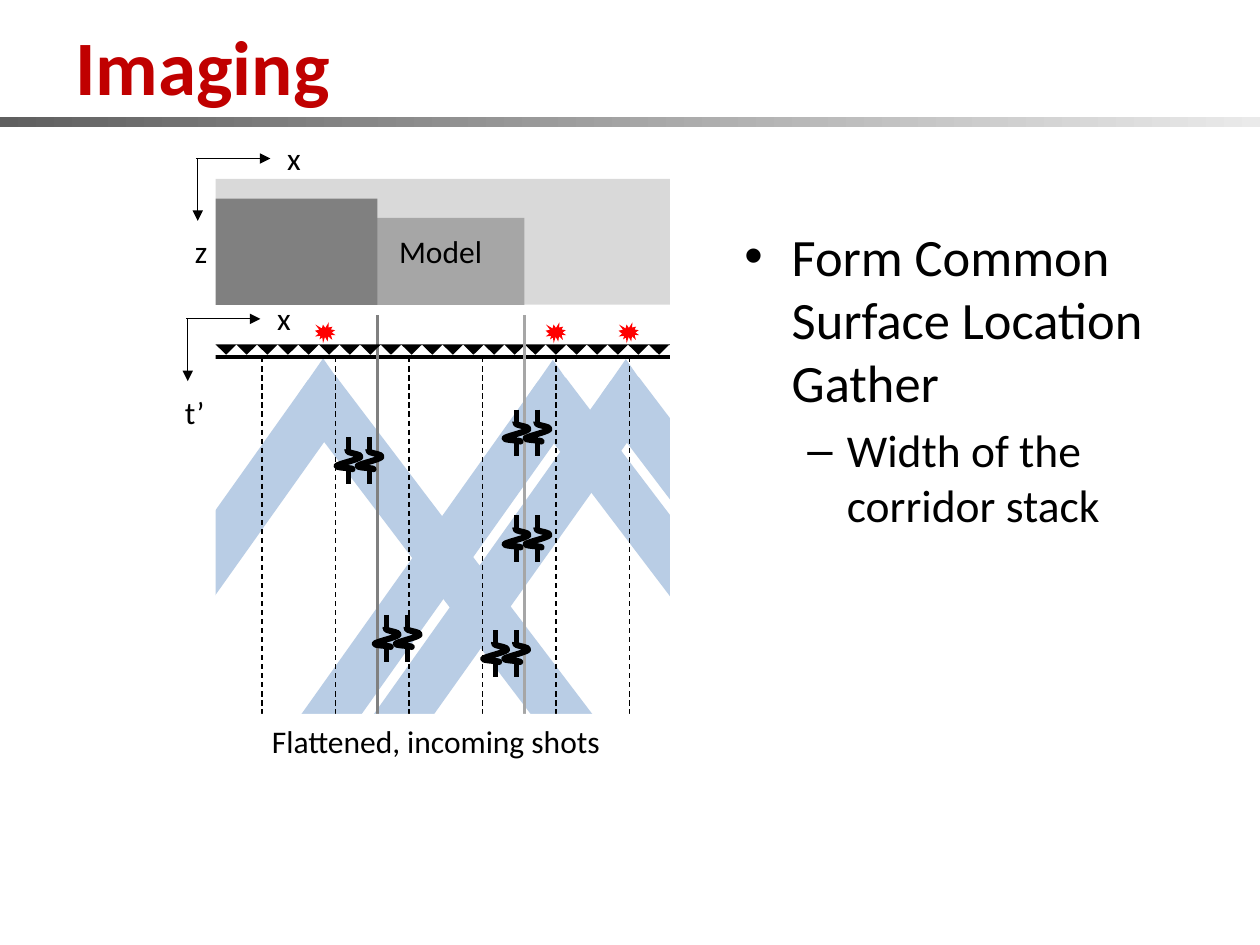
from typing import Any, NamedTuple

from lxml.etree import SubElement
from pptx import Presentation
from pptx.dml.color import RGBColor
from pptx.enum.dml import MSO_LINE
from pptx.enum.shapes import MSO_CONNECTOR, MSO_SHAPE
from pptx.enum.text import MSO_ANCHOR, MSO_AUTO_SIZE
from pptx.oxml.ns import qn
from pptx.util import Pt

BLACK = RGBColor(0x00, 0x00, 0x00)
WHITE = RGBColor(0xFF, 0xFF, 0xFF)
RED = RGBColor(0xFF, 0x00, 0x00)
TITLE_RED = RGBColor(0xC0, 0x00, 0x00)
BAND_BLUE = RGBColor(0xB9, 0xCD, 0xE5)
DARK_GREY = RGBColor(0x80, 0x80, 0x80)
MID_GREY = RGBColor(0xA6, 0xA6, 0xA6)
LIGHT_GREY = RGBColor(0xD9, 0xD9, 0xD9)
BAR_START = RGBColor(0x5F, 0x5F, 0x5F)
BAR_END = RGBColor(0xEA, 0xEA, 0xEA)

LABEL = {"name": "Calibri", "size": Pt(18)}
TITLE = {"name": "Calibri", "size": Pt(44), "bold": True}


class Area(NamedTuple):
    left: float
    top: float
    width: float
    height: float


class Point(NamedTuple):
    x: float
    y: float


class Bullet(NamedTuple):
    text: str
    mark: str
    size: float
    margin: float
    indent: float
    space_before: float


BULLETS = [
    Bullet("Form Common Surface Location Gather", "•", 30, 27, -27, 0),
    Bullet("Width of the corridor stack", "–", 26, 58.5, -22.5, 5.2),
]
WEDGE_SHIFTS = [Point(0, 0), Point(173, 0.4), Point(131.3, 0.8)]
SHOT_LEFTS = [180, 311.8, 353.5]
TRACE_PAIRS = [Point(199.2, 249.8), Point(295.2, 234), Point(295.2, 294.5),
               Point(221, 351.4), Point(283, 360)]
TRACE_GAP = 12
# A start point, then two control points and an end point for each curve
TRACE_POINTS = [
    Point(-0.6, 7.1),
    Point(-0.8, 7.5), Point(-0.9, 8), Point(0.2, 8.6),
    Point(1.6, 9.3), Point(7.9, 9.9), Point(6.7, 11.4),
    Point(5.4, 12.9), Point(-5.9, 15.3), Point(-6.8, 16.4),
    Point(-7.6, 17.5), Point(0.4, 17.6), Point(1.8, 18),
    Point(3.2, 18.3), Point(1.6, 18.3), Point(1.8, 18.3),
    Point(1.8, 18.3), Point(1.9, 18.2), Point(1.9, 18.1),
]


def add_block(slide: Any, area: Area, color: RGBColor,
              kind: MSO_SHAPE = MSO_SHAPE.RECTANGLE, rotation: float = 0) -> Any:
    block = slide.shapes.add_shape(kind, *map(Pt, area))
    block.shadow.inherit = False
    block.fill.solid()
    block.fill.fore_color.rgb = color
    block.line.fill.background()
    block.rotation = rotation
    return block


def add_line(slide: Any, start: Point, end: Point, color: RGBColor, width: float,
             dashed: bool = False, arrow: bool = False) -> None:
    connector = slide.shapes.add_connector(MSO_CONNECTOR.STRAIGHT, *map(Pt, start + end))
    connector.line.color.rgb = color
    connector.line.width = Pt(width)
    if dashed:
        connector.line.dash_style = MSO_LINE.DASH
    properties = connector.line._get_or_add_ln()
    if arrow:
        SubElement(properties, qn("a:tailEnd"), type="triangle")
    SubElement(properties.getparent(), qn("a:effectLst"))


def format_font(font: Any, values: dict[str, Any], color: RGBColor) -> None:
    for name, value in values.items():
        setattr(font, name, value)
    font.color.rgb = color


def add_label(slide: Any, area: Area, text: str) -> None:
    frame = slide.shapes.add_textbox(*map(Pt, area)).text_frame
    frame.word_wrap = False
    frame.auto_size = MSO_AUTO_SIZE.SHAPE_TO_FIT_TEXT
    span = frame.paragraphs[0].add_run()
    span.text = text
    format_font(span.font, LABEL, BLACK)


def add_title(slide: Any, area: Area, text: str) -> None:
    frame = slide.shapes.add_textbox(*map(Pt, area)).text_frame
    frame.word_wrap = True
    frame.vertical_anchor = MSO_ANCHOR.MIDDLE
    span = frame.paragraphs[0].add_run()
    span.text = text
    format_font(span.font, TITLE, TITLE_RED)


def add_bullets(slide: Any, area: Area, bullets: list[Bullet]) -> None:
    frame = slide.shapes.add_textbox(*map(Pt, area)).text_frame
    frame.word_wrap = True
    for index, bullet in enumerate(bullets):
        para = frame.add_paragraph() if index else frame.paragraphs[0]
        para.level = index
        para.space_before = Pt(bullet.space_before)
        properties = para._p.get_or_add_pPr()
        properties.set("marL", str(Pt(bullet.margin)))
        properties.set("indent", str(Pt(bullet.indent)))
        SubElement(properties, qn("a:buFont"), typeface="Arial")
        SubElement(properties, qn("a:buChar"), char=bullet.mark)
        span = para.add_run()
        span.text = bullet.text
        format_font(span.font, {"name": "Calibri", "size": Pt(bullet.size)}, BLACK)


def add_wedge(slide: Any, shift: Point) -> None:
    """Draw the two slanting arms and the tip of one shot's wave band."""
    x, y = shift
    add_block(slide, Area(90.9 + x, 198.9 + y, 28.1, 285.1), BAND_BLUE, rotation=35.4)
    add_block(slide, Area(254.2 + x, 194 + y, 28.1, 289.4), BAND_BLUE, rotation=322.8)
    add_block(slide, Area(170.6 + x, 204.8 + y, 28.1, 20.2), BAND_BLUE,
              MSO_SHAPE.ISOSCELES_TRIANGLE)


def bend_segments(outline: Any) -> None:
    """Turn each three line segments of a freeform into one cubic curve."""
    segments = list(outline._element.iter(qn("a:lnTo")))
    for first, second, end in zip(segments[::3], segments[1::3], segments[2::3]):
        parent = first.getparent()
        curve = SubElement(parent, qn("a:cubicBezTo"))
        for segment in (first, second, end):
            curve.append(segment[0])
            parent.remove(segment)


def add_trace(slide: Any, top: Point) -> None:
    """Draw a wavelet between two short stems."""
    placed = [(Pt(top.x + point.x), Pt(top.y + point.y)) for point in TRACE_POINTS]
    builder = slide.shapes.build_freeform(*placed[0])
    builder.add_line_segments(placed[1:], close=False)
    wavelet = builder.convert_to_shape()
    bend_segments(wavelet)
    wavelet.shadow.inherit = False
    wavelet.fill.background()
    wavelet.line.color.rgb = BLACK
    wavelet.line.width = Pt(3.5)
    for offset in (0, 18):
        add_line(slide, Point(top.x, top.y + offset),
                 Point(top.x, top.y + offset + 8.6), BLACK, 2.75)


def add_axes(slide: Any, corner: Point, depth_label: str, label_width: float) -> None:
    x, y = corner
    add_line(slide, corner, Point(x, y + 35.6), BLACK, 0.75, arrow=True)
    add_line(slide, Point(x - 1, y), Point(x + 41.5, y), BLACK, 0.75, arrow=True)
    add_label(slide, Area(x - 8.7, y + 38.7, label_width, 29), depth_label)
    add_label(slide, Area(x + 44, y - 14.7, 22.3, 29), "x")


def main() -> None:
    deck = Presentation()
    deck.slide_width, deck.slide_height = Pt(720), Pt(540)
    slide = deck.slides.add_slide(deck.slide_layouts[6])

    bar = add_block(slide, Area(0, 67, 720, 5.5), BAR_START)
    bar.fill.gradient()
    bar.fill.gradient_angle = 0
    for stop, color in zip(bar.fill.gradient_stops, (BAR_START, BAR_END)):
        stop.color.rgb = color

    for shift in WEDGE_SHIFTS:
        add_wedge(slide, shift)
    add_block(slide, Area(65.7, 102.2, 546, 72), LIGHT_GREY)
    add_line(slide, Point(65.7, 204.2), Point(612, 204.2), BLACK, 2.25)
    add_block(slide, Area(65.7, 124.5, 234, 49.7), MID_GREY)
    add_block(slide, Area(65.7, 113.5, 150, 60.7), DARK_GREY)
    add_line(slide, Point(215.8, 180), Point(215.8, 438.5), DARK_GREY, 1.5)
    for index in range(6):
        x = 149.8 + 42 * index
        add_line(slide, Point(x, 204.2), Point(x, 489), BLACK, 0.75, dashed=True)
    for index in range(24):
        add_block(slide, Area(111.4 + 11.78 * index, 196.8, 12, 5.9), BLACK,
                  MSO_SHAPE.ISOSCELES_TRIANGLE, 180)
    add_line(slide, Point(299.7, 180), Point(299.7, 457), MID_GREY, 1.5)
    for left in SHOT_LEFTS:
        add_block(slide, Area(left, 184.2, 11.8, 12), RED, MSO_SHAPE.EXPLOSION1)
    add_label(slide, Area(221, 129.3, 62.6, 29), "Model")

    # White margins trim the section to its window
    for margin in (Area(71, 408, 486.7, 90), Area(383, 84.2, 259.2, 370),
                   Area(5.8, 90, 117.4, 376.6)):
        add_block(slide, margin, WHITE)
    for pair in TRACE_PAIRS:
        add_trace(slide, pair)
        add_trace(slide, Point(pair.x + TRACE_GAP, pair.y))

    add_axes(slide, Point(113, 90.6), "z", 21.6)
    add_axes(slide, Point(107.3, 182.2), "t’", 26)
    add_title(slide, Area(36, 5.8, 648, 62.6), "Imaging")
    add_bullets(slide, Area(418.3, 124.6, 289.4, 356.4), BULLETS)
    add_label(slide, Area(148.3, 409, 204.5, 29), "Flattened, incoming shots")
    deck.save("out.pptx")


if __name__ == "__main__":
    main()
